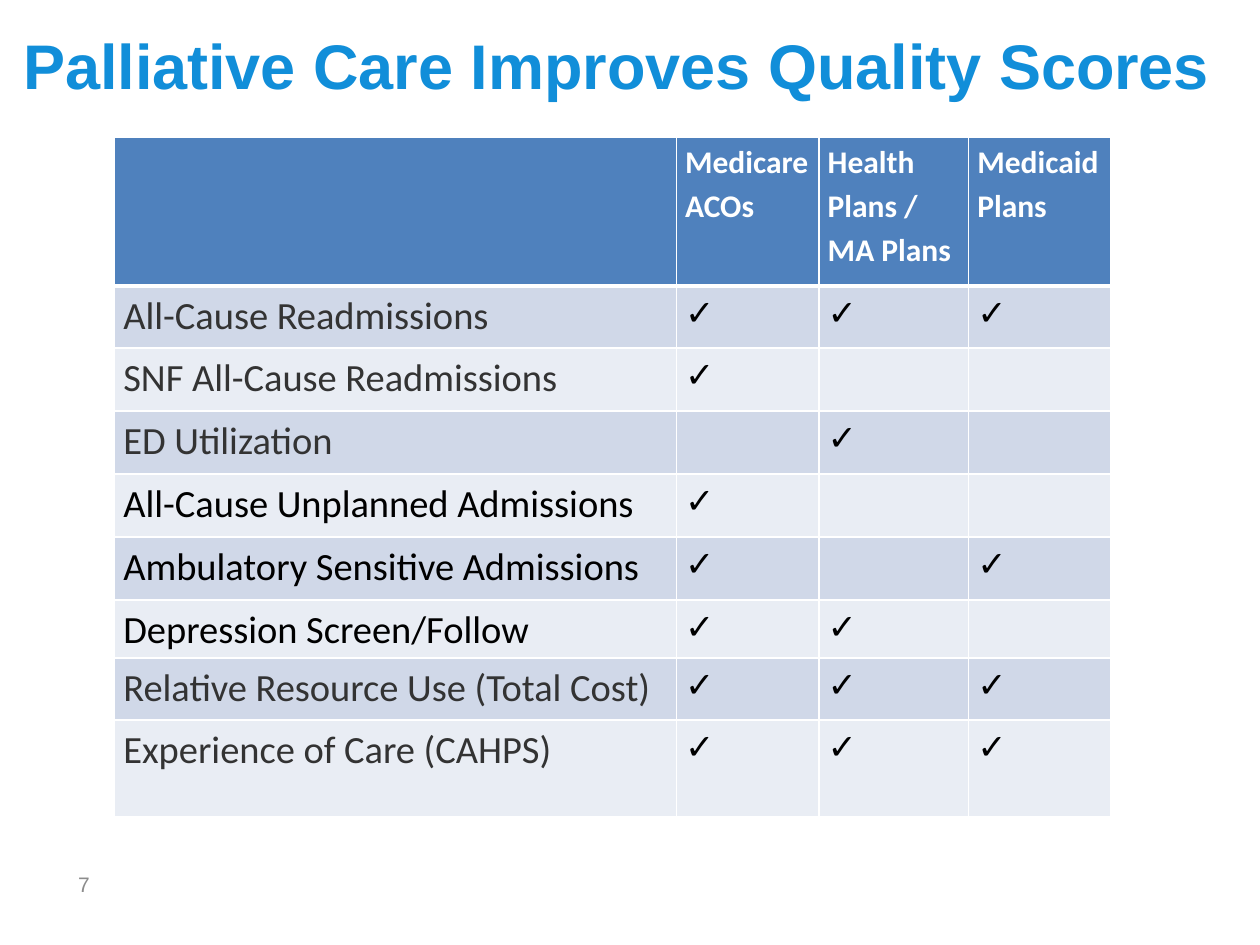
from lxml import etree
from pptx import Presentation
from pptx.dml.color import RGBColor
from pptx.enum.text import MSO_ANCHOR, MSO_AUTO_SIZE, PP_ALIGN
from pptx.oxml.ns import qn
from pptx.util import Pt

TOP, MIDDLE = MSO_ANCHOR.TOP, MSO_ANCHOR.MIDDLE
NO_FIT = MSO_AUTO_SIZE.NONE
LEFT = PP_ALIGN.LEFT

WHITE = RGBColor(0xFF, 0xFF, 0xFF)
BLACK = RGBColor(0, 0, 0)
DARK = RGBColor(0x33, 0x33, 0x33)
GRAY = RGBColor(0x8C, 0x8C, 0x8C)
TITLE_BLUE = RGBColor(0x11, 0x8E, 0xD9)
HEADER_BLUE = RGBColor(0x4F, 0x81, 0xBD)
BANDS = (RGBColor(0xD0, 0xD8, 0xE8), RGBColor(0xE9, 0xED, 0xF4))

TITLE_FONT = {"name": "Arial", "size": Pt(36), "bold": True}
NUMBER_FONT = {"name": "Arial", "size": Pt(12), "bold": False}
HEADER_FONT = {"name": "Calibri", "size": Pt(18), "bold": True}
LABEL_FONT = {"name": "Calibri", "size": Pt(22), "bold": False}
CHECK_FONT = {"name": "Calibri", "size": Pt(20), "bold": True}
CELL_FORMAT = {"margin_left": Pt(5), "margin_right": Pt(5),
               "margin_top": 0, "margin_bottom": 0}

HEADERS = ("", "Medicare ACOs", "Health Plans / MA Plans", "Medicaid\nPlans")
MEASURES = (
    ("All-Cause Readmissions", DARK, (1, 1, 1)),
    ("SNF All-Cause Readmissions", DARK, (1, 0, 0)),
    ("ED Utilization", DARK, (0, 1, 0)),
    ("All-Cause Unplanned Admissions", BLACK, (1, 0, 0)),
    ("Ambulatory Sensitive Admissions", BLACK, (1, 0, 1)),
    ("Depression Screen/Follow", BLACK, (1, 1, 0)),
    ("Relative Resource Use (Total Cost)", DARK, (1, 1, 1)),
    ("Experience of Care (CAHPS)", DARK, (1, 1, 1)),
)
COL_WIDTHS = (321, 81.5, 85.5, 81.5)
ROW_HEIGHTS = (85, 35.5, 36, 36, 36, 36, 33, 35.5, 55)


def set_attrs(obj, values):
    """Set each attribute in a dict of format values."""
    for name, value in values.items():
        setattr(obj, name, value)


def write_text(tf, text, font, color, spacing=None):
    """Write one left-aligned paragraph per line of text."""
    tf.text = text
    for p in tf.paragraphs:
        set_attrs(p, {"alignment": LEFT, "line_spacing": spacing})
        for r in p.runs:
            set_attrs(r.font, font)
            r.font.color.rgb = color


def set_borders(cell, bottom):
    """Give a cell white borders, with its own bottom width in points."""
    tc_pr = cell._tc.get_or_add_tcPr()
    sides = {"a:lnL": 1, "a:lnR": 1, "a:lnT": 1, "a:lnB": bottom}
    for i, (tag, width) in enumerate(sides.items()):
        ln = etree.Element(qn(tag), w=str(Pt(width)))
        fill = etree.SubElement(ln, qn("a:solidFill"))
        etree.SubElement(fill, qn("a:srgbClr"), val=str(WHITE))
        tc_pr.insert(i, ln)


def fill_cell(cell, text, font, color, fill, bottom=1):
    """Write and format one table cell."""
    set_attrs(cell, CELL_FORMAT)
    cell.fill.solid()
    cell.fill.fore_color.rgb = fill
    write_text(cell.text_frame, text, font, color, 1.15)
    set_borders(cell, bottom)


def add_title(s, x, y, w, h):
    """Place the slide title in its placeholder."""
    sp = s.shapes.title
    set_attrs(sp, {"left": Pt(x), "top": Pt(y), "width": Pt(w), "height": Pt(h)})
    tf = sp.text_frame
    set_attrs(tf, {"vertical_anchor": TOP, "word_wrap": True, "auto_size": NO_FIT})
    write_text(tf, "Palliative Care Improves Quality Scores", TITLE_FONT, TITLE_BLUE)


def add_measures(s, x, y):
    """Build the table of quality measures by payer."""
    table = s.shapes.add_table(
        len(ROW_HEIGHTS), len(COL_WIDTHS), Pt(x), Pt(y),
        Pt(sum(COL_WIDTHS)), Pt(sum(ROW_HEIGHTS))).table
    for col, width in zip(table.columns, COL_WIDTHS):
        col.width = Pt(width)
    for row, height in zip(table.rows, ROW_HEIGHTS):
        row.height = Pt(height)
    for j, text in enumerate(HEADERS):
        fill_cell(table.cell(0, j), text, HEADER_FONT, WHITE, HEADER_BLUE, 3)
    for i, (label, color, checks) in enumerate(MEASURES):
        band = BANDS[i % 2]
        fill_cell(table.cell(i + 1, 0), label, LABEL_FONT, color, band)
        for j, checked in enumerate(checks, 1):
            mark = "✓" if checked else ""
            fill_cell(table.cell(i + 1, j), mark, CHECK_FONT, BLACK, band)


def add_number(s, x, y, w, h):
    """Place the slide number."""
    tf = s.shapes.add_textbox(Pt(x), Pt(y), Pt(w), Pt(h)).text_frame
    set_attrs(tf, {"vertical_anchor": MIDDLE, "word_wrap": True})
    write_text(tf, "7", NUMBER_FONT, GRAY)


def main():
    """Build and save the slide."""
    prs = Presentation()
    set_attrs(prs, {"slide_width": Pt(720), "slide_height": Pt(540)})
    s = prs.slides.add_slide(prs.slide_layouts[5])
    add_title(s, 6, 11.5, 704, 84)
    add_measures(s, 65.5, 78.5)
    add_number(s, 37.5, 490.5, 37.5, 30)
    prs.save("out.pptx")


if __name__ == "__main__":
    main()
